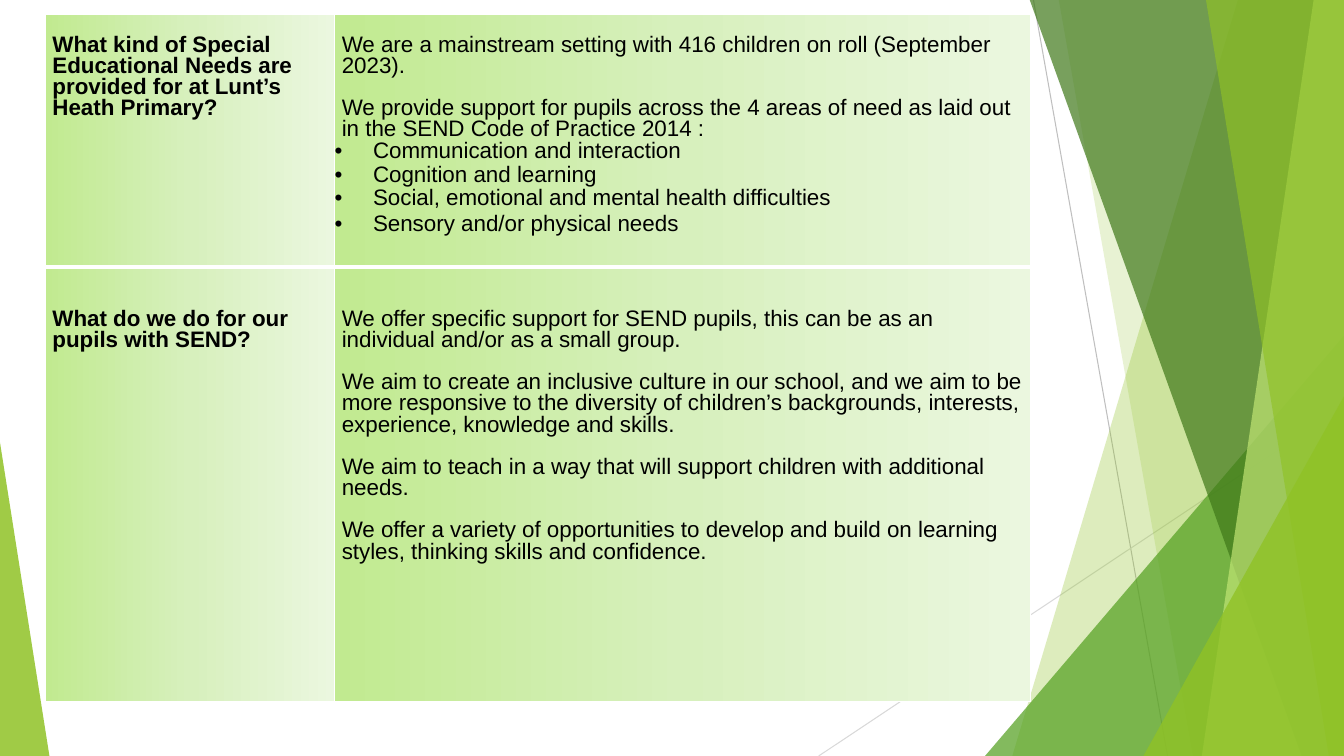
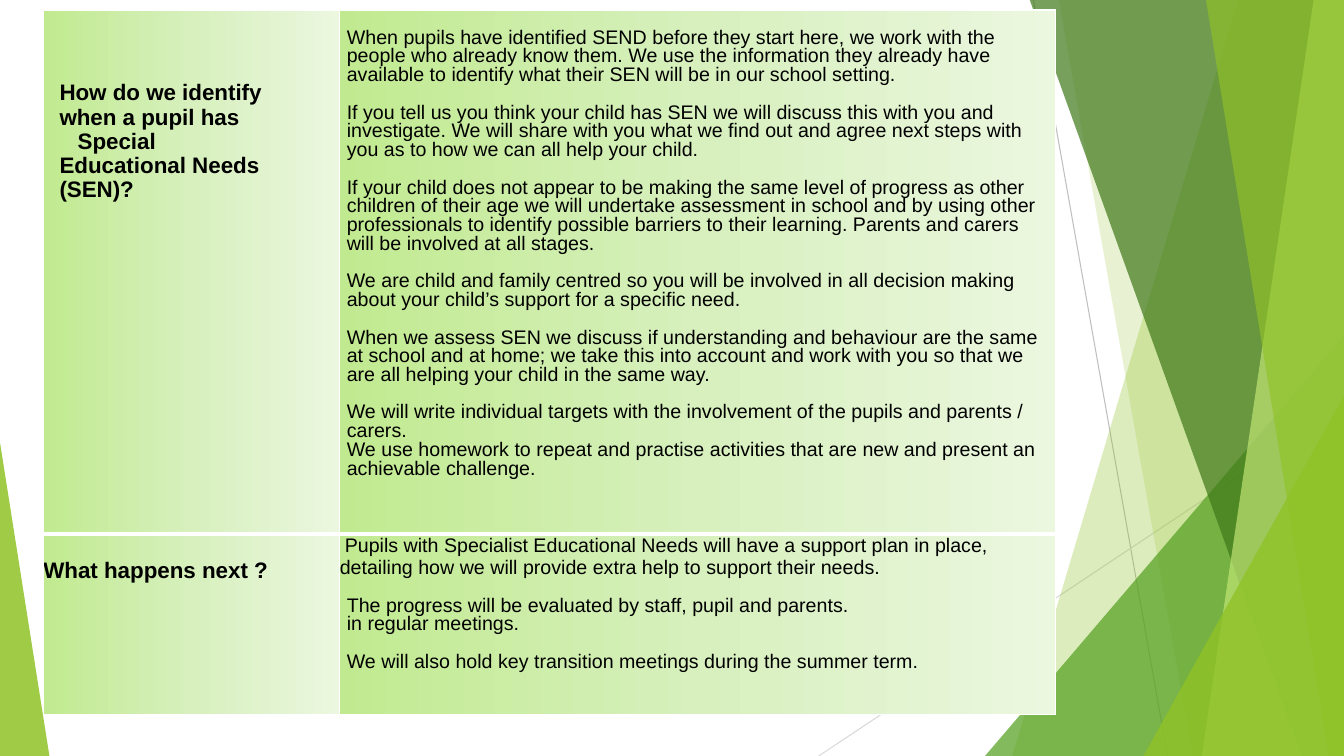
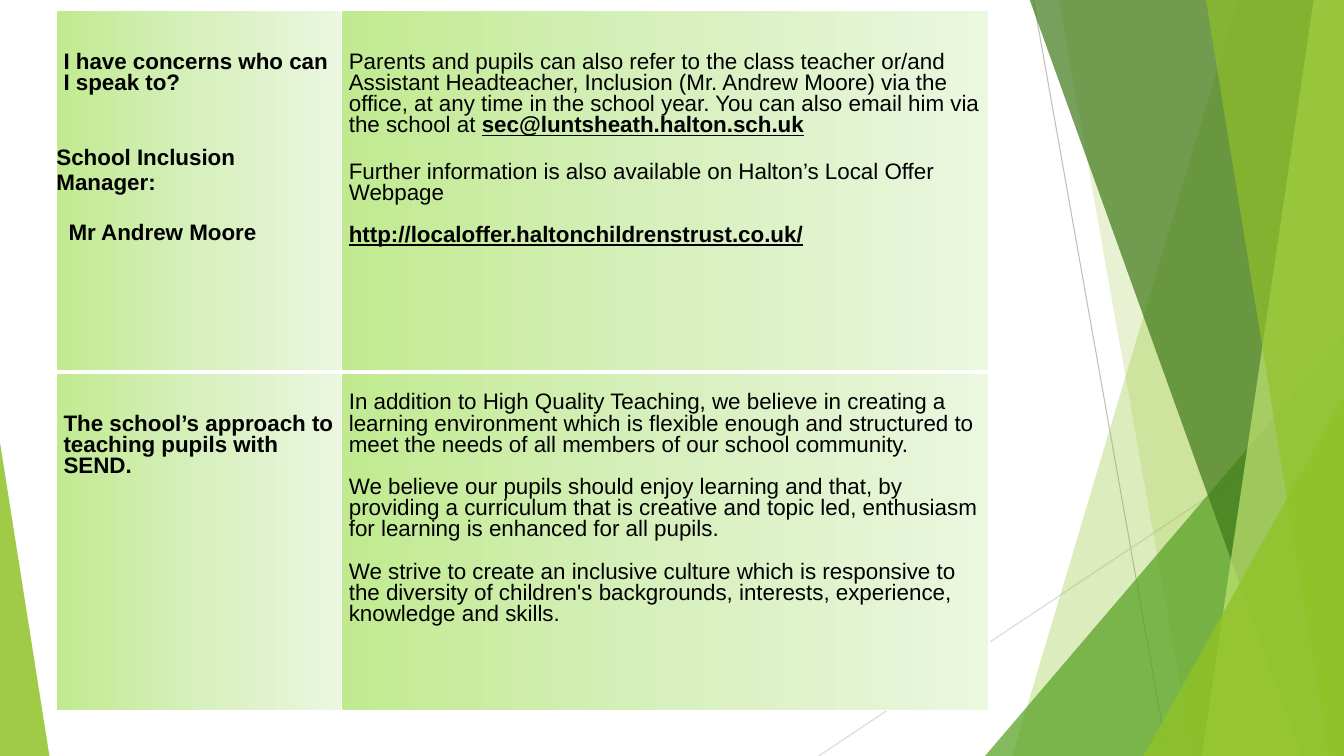
from typing import NamedTuple

from lxml.etree import SubElement
from pptx import Presentation
from pptx.dml.color import RGBColor
from pptx.enum.shapes import MSO_CONNECTOR as Connector, MSO_SHAPE as Preset
from pptx.oxml.ns import qn
from pptx.util import Inches, Pt


class Theme:
    font = "Arial"
    large, small = 16, 14
    ink, white = "000000", "FFFFFF"
    lime, green, forest, pale = "90C226", "54A021", "3F7819", "C0E474"
    rule_dark, rule_light = "BFBFBF", "D9D9D9"
    cell_stops = ((0, "C1EA90"), (50, "D7F0BD"), (100, "EBF7DF"))
    rule, thin, thick = 0.75, 1, 3
    cell_right = 0.05


class Style(NamedTuple):
    left: float = 0.07
    first: float = 0
    spacing: object = 0.85
    bullet: bool = False


class Para(NamedTuple):
    text: object
    gap: float = 0
    style: Style = Style()


class Cell(NamedTuple):
    top: float
    size: int
    paras: list


class Emphasis(str):
    pass


PLAIN = Style(0, 0, 1.0)
HANGING = Style(0.34, -0.18, 0.97)
GAP_LARGE, GAP_SMALL, GAP_FULL = 15.1, 13.4, 18


def listed(text, pitch):
    return Para(text, 0, Style(0.38, -0.38, Pt(pitch), True))


WIDTH, HEIGHT, BLEED = 13.33, 7.5, -0.01

RULES = [
    ((10.25, 0), (11.58, HEIGHT), Theme.rule_dark),
    ((WIDTH, 4.03), (8.12, HEIGHT), Theme.rule_light),
]
# Bands run from a top corner to a bottom corner and fill to the right edge.
BANDS = [
    ("band", (12.28, 10.04), Theme.lime, 30),
    ("band", (10.5, 11.83), Theme.lime, 20),
    ("peak", (9.77, 3.33, 3.56, 4.17, 1), Theme.green, 72),
    ("band", (10.21, 12.91), Theme.forest, 70),
    ("band", (13.03, 11.92), Theme.pale, 70),
    ("band", (11.96, 13.18), Theme.lime, 65),
    ("peak", (11.34, 3.93, 1.99, 3.57, 1), Theme.lime, 80),
    ("peak", (0, 4.39, 0.49, 3.11, 0), Theme.lime, 85),
]

PAGES = [
    {
        "at": (0.45, 0.14), "columns": (2.87, 6.9), "heights": (2.51, 4.31),
        "rows": [
            (
                Cell(0.21, Theme.large, [
                    Para("What kind of Special Educational Needs are provided for at Lunt’s Heath Primary?"),
                ]),
                Cell(0.21, Theme.large, [
                    Para("We are a mainstream setting with 416 children on roll (September 2023)."),
                    Para("We provide support for pupils across the 4 areas of need as laid out in the SEND Code of Practice 2014 :", GAP_LARGE),
                    listed("Communication and interaction", 16.1),
                    listed("Cognition and learning", 16.8),
                    listed("Social, emotional and mental health difficulties", 16.8),
                    listed("Sensory and/or physical needs", 18.1),
                ]),
            ),
            (
                Cell(0.42, Theme.large, [Para("What do we do for our pupils with SEND?")]),
                Cell(0.42, Theme.large, [
                    Para("We offer specific support for SEND pupils, this can be as an individual and/or as a small group."),
                    Para("We aim to create an inclusive culture in our school, and we aim to be more responsive to the diversity of children’s backgrounds, interests, experience, knowledge and skills.", GAP_LARGE),
                    Para("We aim to teach in a way that will support children with additional needs.", GAP_LARGE),
                    Para("We offer a variety of opportunities to develop and build on learning styles, thinking skills and confidence.", GAP_LARGE),
                ]),
            ),
        ],
    },
    {
        "at": (0.43, 0.1), "columns": (2.94, 7.1), "heights": (5.2, 1.79),
        "rows": [
            (
                Cell(0.71, Theme.large, [
                    Para("How do we identify", 0, HANGING),
                    Para("when a pupil has\nSpecial", 0, HANGING),
                    Para("Educational Needs", 0, HANGING),
                    Para("(SEN)?", 0, HANGING),
                ]),
                Cell(0.19, Theme.small, [
                    Para("When pupils have identified SEND before they start here, we work with the people who already know them. We use the information they already have available to identify what their SEN will be in our school setting."),
                    Para("If you tell us you think your child has SEN we will discuss this with you and investigate. We will share with you what we find out and agree next steps with you as to how we can all help your child.", GAP_SMALL),
                    Para("If your child does not appear to be making the same level of progress as other children of their age we will undertake assessment in school and by using other professionals to identify possible barriers to their learning. Parents and carers will be involved at all stages.", GAP_SMALL),
                    Para("We are child and family centred so you will be involved in all decision making about your child’s support for a specific need.", GAP_SMALL),
                    Para("When we assess SEN we discuss if understanding and behaviour are the same at school and at home; we take this into account and work with you so that we are all helping your child in the same way.", GAP_SMALL),
                    Para("We will write individual targets with the involvement of the pupils and parents / carers.", GAP_SMALL),
                    Para("We use homework to repeat and practise activities that are new and present an achievable challenge."),
                ]),
            ),
            (
                Cell(0.24, Theme.large, [Para("What happens next ?", 0, PLAIN)]),
                Cell(0, Theme.small, [
                    Para("Pupils with Specialist Educational Needs will have a support plan in place, detailing how we will provide extra help to support their needs.", 0, Style(0, 0.05, 1.0)),
                    Para("The progress will be evaluated by staff, pupil and parents.", GAP_SMALL),
                    Para("in regular meetings."),
                    Para("We will also hold key transition meetings during the summer term.", GAP_SMALL),
                ]),
            ),
        ],
    },
    {
        "at": (0.56, 0.1), "columns": (2.83, 6.42), "heights": (3.59, 3.36),
        "rows": [
            (
                Cell(0.42, Theme.large, [
                    Para("I have concerns who can I speak to?"),
                    Para("School Inclusion\nManager:", 2 * GAP_FULL, PLAIN),
                    Para("Mr Andrew Moore", GAP_FULL, Style(0.12, 0, 1.0)),
                ]),
                Cell(0.42, Theme.large, [
                    Para((
                        "Parents and pupils can also refer to the class teacher or/and Assistant Headteacher, Inclusion (Mr. Andrew Moore) via the office, at any time in the school year. You can also email him via the school at ",
                        Emphasis("sec@luntsheath.halton.sch.uk"),
                    )),
                    Para("Further information is also available on Halton’s Local Offer Webpage", GAP_FULL),
                    Para((Emphasis("http://localoffer.haltonchildrenstrust.co.uk/"),), GAP_LARGE),
                ]),
            ),
            (
                Cell(0.42, Theme.large, [Para("The school’s approach to teaching pupils with SEND.")]),
                Cell(0.21, Theme.large, [
                    Para("In addition to High Quality Teaching, we believe in creating a learning environment which is flexible enough and structured to meet the needs of all members of our school community."),
                    Para("We believe our pupils should enjoy learning and that, by providing a curriculum that is creative and topic led, enthusiasm for learning is enhanced for all pupils.", GAP_LARGE),
                    Para("We strive to create an inclusive culture which is responsive to the diversity of children's backgrounds, interests, experience, knowledge and skills.", GAP_LARGE),
                ]),
            ),
        ],
    },
]


def rgb(code):
    return RGBColor.from_string(code)


def add_rule(shapes, start, end, color):
    rule = shapes.add_connector(Connector.STRAIGHT, *map(Inches, start + end))
    rule.line.color.rgb = rgb(color)
    rule.line.width = Pt(Theme.rule)
    SubElement(rule.element.spPr, qn("a:effectLst"))
    return rule


def add_band(shapes, top_x, bottom_x):
    corners = [(top_x, BLEED), (WIDTH, BLEED), (WIDTH, HEIGHT), (bottom_x, HEIGHT)]
    points = [(Inches(x), Inches(y)) for x, y in corners]
    outline = shapes.build_freeform(*points[0], scale=1.0)
    outline.add_line_segments(points[1:], close=True)
    return outline.convert_to_shape()


def add_peak(shapes, left, top, width, height, apex):
    peak = shapes.add_shape(Preset.ISOSCELES_TRIANGLE, *map(Inches, (left, top, width, height)))
    peak.adjustments[0] = apex
    return peak


def decorate(layout, shapes):
    for holder in list(layout.placeholders):
        layout.shapes.element.remove(holder.element)
    facets = [add_rule(shapes, *rule) for rule in RULES]
    draw = {"band": add_band, "peak": add_peak}
    for kind, geometry, color, opacity in BANDS:
        facet = draw[kind](shapes, *geometry)
        facet.shadow.inherit = False
        facet.fill.solid()
        facet.fill.fore_color.rgb = rgb(color)
        tint = facet.element.spPr.find(qn("a:solidFill"))[0]
        SubElement(tint, qn("a:alpha"), val=str(opacity * 1000))
        facet.line.fill.background()
        facets.append(facet)
    for facet in facets:
        layout.shapes.element.append(facet.element)


def paint_cell(cell, row):
    props = cell._tc.get_or_add_tcPr()
    edges = {
        "lnL": Theme.thin,
        "lnR": Theme.thin,
        "lnT": Theme.thick if row else Theme.thin,
        "lnB": Theme.thin if row else Theme.thick,
    }
    for edge, weight in edges.items():
        line = SubElement(props, qn(f"a:{edge}"), w=str(Pt(weight)))
        SubElement(SubElement(line, qn("a:solidFill")), qn("a:srgbClr"), val=Theme.white)
    gradient = SubElement(props, qn("a:gradFill"), rotWithShape="1")
    stops = SubElement(gradient, qn("a:gsLst"))
    for position, color in Theme.cell_stops:
        stop = SubElement(stops, qn("a:gs"), pos=str(position * 1000))
        SubElement(stop, qn("a:srgbClr"), val=color)
    SubElement(gradient, qn("a:lin"), ang="0", scaled="0")


def write_para(paragraph, para, size, bold):
    style = para.style
    props = paragraph._p.get_or_add_pPr()
    props.set("marL", str(Inches(style.left)))
    props.set("indent", str(Inches(style.first)))
    if style.bullet:
        SubElement(props, qn("a:buFont"), typeface=Theme.font)
        SubElement(props, qn("a:buChar"), char="•")
    paragraph.line_spacing = style.spacing
    paragraph.space_before = Pt(para.gap)
    pieces = (para.text,) if isinstance(para.text, str) else para.text
    for piece in pieces:
        strong = isinstance(piece, Emphasis)
        for index, words in enumerate(piece.split("\n")):
            if index:
                paragraph.add_line_break()
            run = paragraph.add_run()
            run.text = words
            run.font.name = Theme.font
            run.font.size = Pt(size)
            run.font.bold = bold or strong
            run.font.underline = strong
            run.font.color.rgb = rgb(Theme.ink)


def fill_cell(cell, content, row, column):
    cell.margin_left = cell.margin_bottom = 0
    cell.margin_right = Inches(Theme.cell_right)
    cell.margin_top = Inches(content.top)
    paint_cell(cell, row)
    frame = cell.text_frame
    for index, para in enumerate(content.paras):
        paragraph = frame.add_paragraph() if index else frame.paragraphs[0]
        write_para(paragraph, para, content.size, bold=column == 0)


def add_questions(slide, page):
    columns, heights = page["columns"], page["heights"]
    box = (*page["at"], sum(columns), sum(heights))
    table = slide.shapes.add_table(len(heights), len(columns), *map(Inches, box)).table
    table.first_row = table.horz_banding = False
    for column, width in zip(table.columns, columns):
        column.width = Inches(width)
    for row, height in zip(table.rows, heights):
        row.height = Inches(height)
    for row, contents in enumerate(page["rows"]):
        for column, content in enumerate(contents):
            fill_cell(table.cell(row, column), content, row, column)


def main():
    deck = Presentation()
    deck.slide_width, deck.slide_height = Inches(WIDTH), Inches(HEIGHT)
    layout = deck.slide_layouts[6]
    slides = [deck.slides.add_slide(layout) for _ in PAGES]
    decorate(layout, slides[0].shapes)
    for slide, page in zip(slides, PAGES):
        add_questions(slide, page)
    deck.save("out.pptx")


if __name__ == "__main__":
    main()
